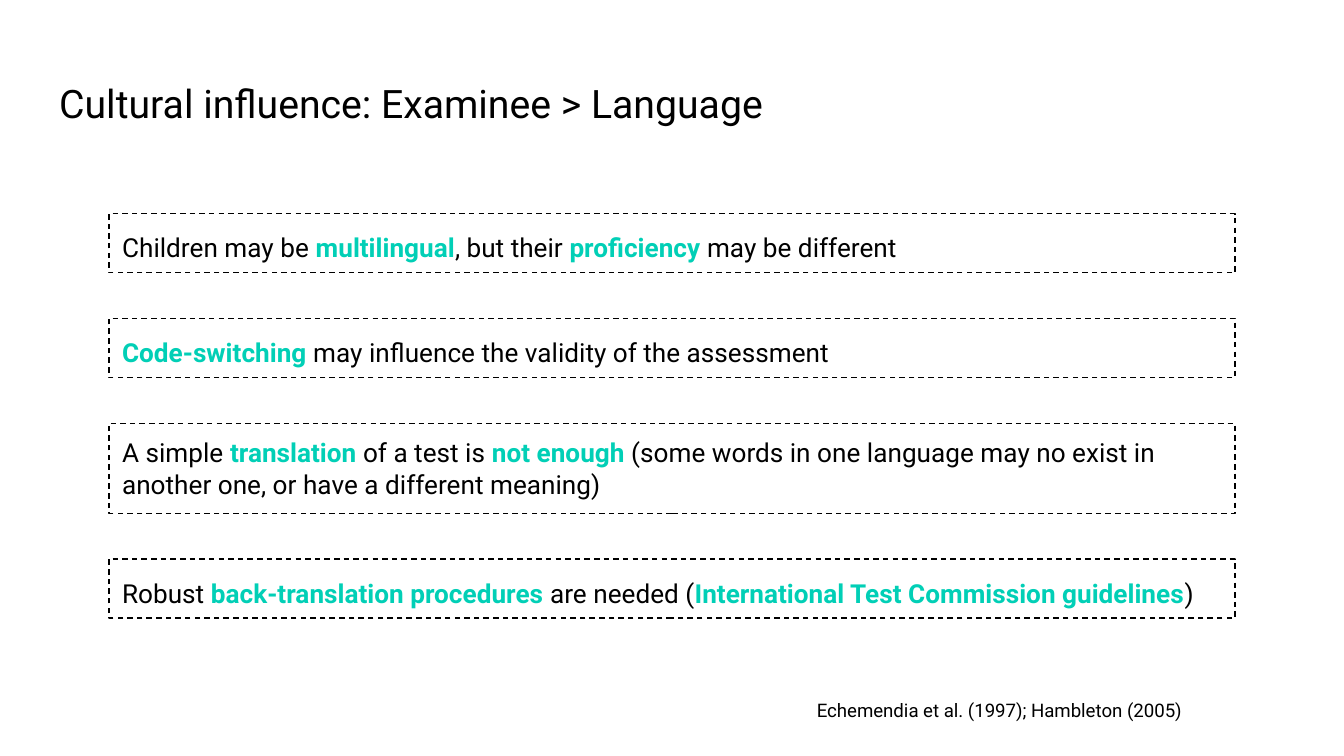
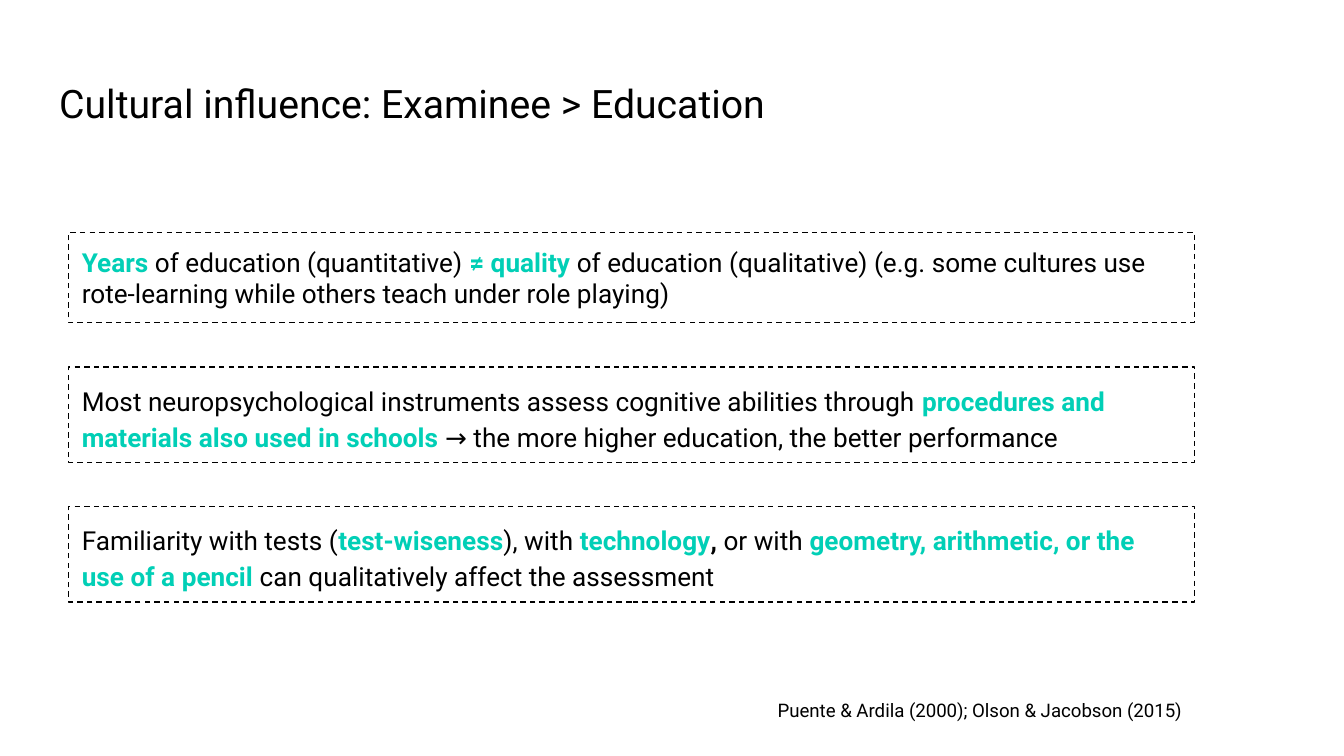
"""Build two slides on how language and education of the examinee shape assessment."""
import pptx
import pptx.dml.color
import pptx.enum.dml
import pptx.enum.shapes
import pptx.enum.text
import pptx.util
from pptx.util import Inches

COLORS = {"text": "000000", "accent": "01CFB6", "background": "FFFFFF"}
FONT = "Roboto"
SLIDE_WIDTH = 10
SLIDE_HEIGHT = SLIDE_WIDTH * 9 / 16
STYLES = {
    "plain": {"color": "text", "bold": False},
    "strong": {"color": "text", "bold": True},
    "key": {"color": "accent", "bold": True},
}
FRAME_FORMAT = {
    "word_wrap": True,
    "vertical_anchor": pptx.enum.text.MSO_ANCHOR.TOP,
    "margin_left": Inches(0.1),
    "margin_top": Inches(0.1),
    "margin_right": Inches(0.1),
    "margin_bottom": Inches(0.1),
}
LEFT = pptx.enum.text.PP_ALIGN.LEFT
COMPACT = {"alignment": LEFT, "space_after": pptx.util.Pt(10)}
SPACED = {"alignment": LEFT, "line_spacing": 1.15}
CITATION = {
    "alignment": pptx.enum.text.PP_ALIGN.RIGHT,
    "line_spacing": 1.15,
    "space_after": pptx.util.Pt(10),
}
FIT_SHAPE = pptx.enum.text.MSO_AUTO_SIZE.SHAPE_TO_FIT_TEXT
FIXED = pptx.enum.text.MSO_AUTO_SIZE.NONE
STATEMENT_WIDTH = 8.38

SLIDES = [
    {
        "title": "Cultural influence: Examinee > Language",
        "citation": "Echemendia et al. (1997); Hambleton (2005)",
        "left": 0.81, "top": 1.59, "gap": 0.34,
        "statements": [
            (0.44, SPACED, [
                ("plain", "Children may be "), ("key", "multilingual"),
                ("plain", ", but their "), ("key", "proficiency "),
                ("plain", "may be different")]),
            (0.44, SPACED, [
                ("key", "Code-switching"),
                ("plain", " may influence the validity of the assessment")]),
            (0.67, COMPACT, [
                ("plain", "A simple "), ("key", "translation "),
                ("plain", "of a test is "), ("key", "not enough"),
                ("plain", " (some words in one language may no exist in "
                          "another one, or have a different meaning)")]),
            (0.44, SPACED, [
                ("plain", "Robust "), ("key", "back-translation procedures"),
                ("plain", " are needed ("),
                ("key", "International Test Commission guidelines"),
                ("plain", ")")]),
        ],
    },
    {
        "title": "Cultural influence: Examinee > Education",
        "citation": "Puente & Ardila (2000); Olson & Jacobson (2015)",
        "left": 0.51, "top": 1.73, "gap": 0.33,
        "statements": [
            (0.67, COMPACT, [
                ("key", "Years "), ("plain", "of education (quantitative) "),
                ("key", "≠ quality "),
                ("plain", "of education (qualitative) (e.g. some cultures use "
                          "rote-learning while others teach under role playing)")]),
            (0.71, SPACED, [
                ("plain", "Most neuropsychological instruments assess "
                          "cognitive abilities through "),
                ("key", "procedures and materials also used in schools"),
                ("plain", " → the more higher education, the better performance")]),
            (0.71, SPACED, [
                ("plain", "Familiarity with tests ("), ("key", "test-wiseness"),
                ("plain", "), with "), ("key", "technology"), ("strong", ", "),
                ("plain", "or with "),
                ("key", "geometry, arithmetic, or the use of a pencil "),
                ("plain", "can qualitatively affect the assessment")]),
        ],
    },
]


def rgb(name):
    """Return the named palette colour."""
    return pptx.dml.color.RGBColor.from_string(COLORS[name])


def apply_format(target, values):
    """Set each attribute of the target from a dict."""
    for attribute, value in values.items():
        setattr(target, attribute, value)


def write_text(frame, runs, size, paragraph_format, auto_size):
    """Write styled runs as the single paragraph of a text frame."""
    apply_format(frame, FRAME_FORMAT)
    frame.auto_size = auto_size
    paragraph = frame.paragraphs[0]
    apply_format(paragraph, paragraph_format)
    for style, text in runs:
        run = paragraph.add_run()
        run.text = text
        apply_format(run.font, {"name": FONT, "size": pptx.util.Pt(size),
                                "bold": STYLES[style]["bold"]})
        run.font.color.rgb = rgb(STYLES[style]["color"])


def add_title(slide, text):
    """Place the slide title in its placeholder."""
    title = slide.shapes.title
    apply_format(title, {"left": Inches(0.34), "top": Inches(0.49),
                         "width": Inches(9.32), "height": Inches(0.63)})
    write_text(title.text_frame, [("plain", text)], 21, {"alignment": LEFT}, FIXED)


def add_statement(slide, left, top, height, paragraph_format, runs):
    """Add a dashed box holding one statement."""
    statement = slide.shapes.add_shape(
        pptx.enum.shapes.MSO_SHAPE.RECTANGLE, Inches(left), Inches(top),
        Inches(STATEMENT_WIDTH), Inches(height))
    statement.shadow.inherit = False
    statement.fill.background()
    statement.line.color.rgb = rgb("text")
    apply_format(statement.line, {"width": pptx.util.Pt(0.75),
                                  "dash_style": pptx.enum.dml.MSO_LINE.DASH})
    write_text(statement.text_frame, runs, 14, paragraph_format, FIT_SHAPE)


def add_statements(slide, left, top, gap, statements):
    """Stack the statements with equal gaps."""
    for height, paragraph_format, runs in statements:
        add_statement(slide, left, top, height, paragraph_format, runs)
        top += height + gap


def add_citation(slide, text):
    """Add the right-aligned citation at the foot of the slide."""
    citation = slide.shapes.add_textbox(
        Inches(4.18), Inches(5.08), Inches(4.71), Inches(0.37))
    write_text(citation.text_frame, [("plain", text)], 10, CITATION, FIT_SHAPE)


def main():
    """Build and save the presentation."""
    deck = pptx.Presentation()
    apply_format(deck, {"slide_width": Inches(SLIDE_WIDTH),
                        "slide_height": Inches(SLIDE_HEIGHT)})
    title_only = deck.slide_layouts[5]
    for content in SLIDES:
        slide = deck.slides.add_slide(title_only)
        slide.background.fill.solid()
        slide.background.fill.fore_color.rgb = rgb("background")
        add_title(slide, content["title"])
        add_statements(slide, content["left"], content["top"], content["gap"],
                       content["statements"])
        add_citation(slide, content["citation"])
    deck.save("out.pptx")


if __name__ == "__main__":
    main()
